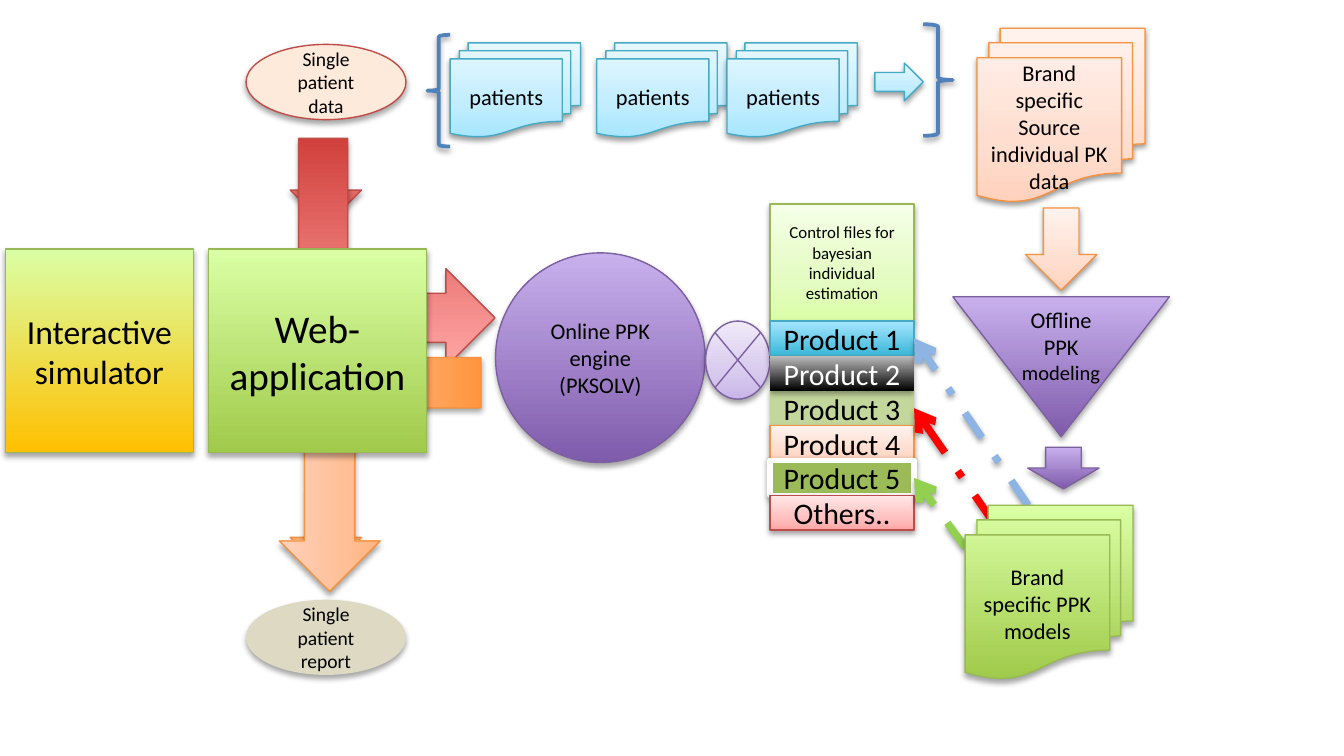
"""Build the slide of a web-based patient simulator fed by population models."""
from copy import deepcopy
from dataclasses import dataclass

from lxml.etree import SubElement
from pptx import Presentation
from pptx.dml.color import RGBColor
from pptx.enum.dml import MSO_LINE
from pptx.enum.shapes import MSO_CONNECTOR, MSO_SHAPE
from pptx.enum.text import MSO_ANCHOR, PP_ALIGN
from pptx.oxml.ns import qn
from pptx.util import Pt


@dataclass(frozen=True)
class Style:
    stops: tuple = ()
    line: str = ""
    width: float = 0.75
    text: str = "000000"
    shadow: tuple = (35, 1.8)


SOFT = (38, 1.6)


class Theme:
    font = "Calibri"
    note, oval, modeling, label, product, simulator, application = 9, 10.5, 11, 12, 16, 18, 21
    red = Style(("D1403C", "FFA6A5"), "BF4C48")
    orange = Style(("FF953E", "FFD2BD"), "F69240")
    purple = Style(("7F5BAB", "C8B0ED"), "7D60A0")
    green = Style(("A0CA4A", "DAFFA5"), "98B955")
    blue = Style(("39B7D8", "A7E6FF"), "46AAC5")
    gold = Style(("FFC000", "DAFFA5"), "98B955")
    black = Style(("000000", "BDBDBD"), text="FFFFFF")
    pale_red = Style(("FFA6A5", "FFC0BF", "FFE7E7"), "BF4C48", shadow=SOFT)
    pale_orange = Style(("FFD2BD", "FFDED0", "FFF2ED"), "F69240", shadow=SOFT)
    pale_purple = Style(("C9B5E8", "D8CBEE", "F0EAF9"), "7D60A0", shadow=SOFT)
    pale_green = Style(("DAFDA7", "E4FCC2", "F5FFE7"), "98B955", shadow=SOFT)
    pale_blue = Style(("A7E6FF", "C1EDFF", "E7F8FF"), "46AAC5", shadow=SOFT)
    data = Style(("FDEADA",), "BF4C48")
    report = Style(("DDD9C3",))
    olive = Style(("C3D69B",))
    framed = Style(("9BBB59",), "FFFFFF", 3, shadow=SOFT)
    brace = Style((), "4F81BD", 2, shadow=SOFT)
    link_colors = ("8EB4E3", "FF0000", "92D050")
    link_width = 4


def add_shadow(shape, opacity, distance):
    properties = shape.element.spPr
    effects = properties.find(qn("a:effectLst"))
    if effects is None:
        effects = SubElement(properties, qn("a:effectLst"))
    shadow = SubElement(effects, qn("a:outerShdw"), blurRad=str(Pt(3.1)),
                        dist=str(Pt(distance)), dir="5400000", rotWithShape="0")
    color = SubElement(shadow, qn("a:srgbClr"), val="000000")
    SubElement(color, qn("a:alpha"), val=str(opacity * 1000))


def add_box(kind, bounds, style, lines=(), size=Theme.label):
    shape = slide.shapes.add_shape(kind, *map(Pt, bounds))
    fill = shape.fill
    if len(style.stops) > 1:
        fill.gradient()
        fill.gradient_angle = 90
        if len(style.stops) == 3:
            first = shape.element.spPr.find(".//" + qn("a:gs"))
            first.addnext(deepcopy(first))
        positions = (0, 1) if len(style.stops) == 2 else (0, 0.35, 1)
        for stop, position, color in zip(fill.gradient_stops, positions, style.stops):
            stop.position = position
            stop.color.rgb = RGBColor.from_string(color)
    elif style.stops:
        fill.solid()
        fill.fore_color.rgb = RGBColor.from_string(style.stops[0])
    else:
        fill.background()
    if style.line:
        shape.line.color.rgb = RGBColor.from_string(style.line)
        shape.line.width = Pt(style.width)
    else:
        shape.line.fill.background()
    shape.shadow.inherit = False
    add_shadow(shape, *style.shadow)
    if lines:
        frame = shape.text_frame
        frame.text = "\n".join(lines)
        frame.word_wrap = True
        frame.vertical_anchor = MSO_ANCHOR.MIDDLE
        for para in frame.paragraphs:
            para.alignment = PP_ALIGN.CENTER
            for span in para.runs:
                span.font.name = Theme.font
                span.font.size = Pt(size)
                span.font.color.rgb = RGBColor.from_string(style.text)
    return shape


deck = Presentation()
deck.slide_width, deck.slide_height = Pt(720), Pt(405)
slide = deck.slides.add_slide(deck.slide_layouts[6])

add_box(MSO_SHAPE.DOWN_ARROW, (155.5, 77, 38.2, 44), Theme.red)
add_box(MSO_SHAPE.OVAL, (131.8, 321.3, 85.7, 40.3), Theme.report,
        ["Single patient report"], Theme.oval)
add_box(MSO_SHAPE.DOWN_ARROW, (155.5, 263, 38.2, 44), Theme.orange)
add_box(MSO_SHAPE.OVAL, (131.8, 23.8, 85.7, 40.3), Theme.data,
        ["Single patient data"], Theme.oval)
add_box(MSO_SHAPE.OVAL, (265.5, 135.5, 112.3, 112.3), Theme.purple,
        ["Online PPK engine", "(PKSOLV)"])

request = add_box(MSO_SHAPE.BENT_ARROW, (160, 74.2, 105.2, 122.4), Theme.red)
response = add_box(MSO_SHAPE.BENT_ARROW, (141, 200.2, 125.3, 108), Theme.orange)
response.rotation = 90
for arrow in (request, response):
    arrow.element.spPr.xfrm.set("flipV", "1")

add_box(MSO_SHAPE.FLOWCHART_MULTIDOCUMENT, (523.4, 15.1, 90, 93), Theme.pale_orange,
        ["Brand specific Source individual PK data"])
add_box(MSO_SHAPE.DOWN_ARROW, (549.4, 111.5, 38.2, 44), Theme.pale_orange)

column_left, column_width, row_top, row_pitch = 412.5, 77.2, 172, 18.7
add_box(MSO_SHAPE.RECTANGLE, (column_left, 109.4, column_width, 62.6), Theme.pale_green,
        ["Control files for bayesian individual estimation"], Theme.note)
add_box(MSO_SHAPE.FLOWCHART_SUMMING_JUNCTION, (378, 172, 34.5, 41.8), Theme.pale_purple)
rows = {}
for index, name, style in (
    (0, "Product 1", Theme.blue),
    (2, "Product 3", Theme.olive),
    (3, "Product 4", Theme.pale_orange),
    (4, "Product 5", Theme.framed),
    (5, "Others..", Theme.pale_red),
    (1, "Product 2", Theme.black),
):
    bounds = (column_left, row_top + row_pitch * index, column_width, 18.6)
    rows[name] = add_box(MSO_SHAPE.RECTANGLE, bounds, style, [name], Theme.product)

starts = ((550.8, 270.7), (531.4, 278.6), (517, 293))
targets = ("Product 1", "Product 3", "Product 5")
for (x, y), target, color in zip(starts, targets, Theme.link_colors):
    link = slide.shapes.add_connector(MSO_CONNECTOR.STRAIGHT, Pt(x), Pt(y), Pt(x), Pt(y))
    link.end_connect(rows[target], 3)
    link.line.color.rgb = RGBColor.from_string(color)
    link.line.width = Pt(Theme.link_width)
    link.line.dash_style = MSO_LINE.DASH_DOT
    SubElement(link.element.spPr.find(qn("a:ln")), qn("a:tailEnd"), type="arrow")
    add_shadow(link, *SOFT)

modeling = add_box(MSO_SHAPE.FLOWCHART_MERGE, (510.5, 159, 116, 75), Theme.purple,
                   ["Offline PPK modeling"])
modeling.text_frame.margin_top = Pt(18)
para = modeling.text_frame.paragraphs[0]
para.runs[0].text = "Offline PPK "
span = para.add_run()
span.text = "modeling"
span.font.name = Theme.font
span.font.size = Pt(Theme.modeling)
span.font.color.rgb = RGBColor.from_string(Theme.purple.text)

add_box(MSO_SHAPE.FLOWCHART_MULTIDOCUMENT, (517, 270.7, 90, 93), Theme.green,
        ["Brand specific PPK models"])
add_box(MSO_SHAPE.DOWN_ARROW, (550.6, 239.6, 38.2, 22.3), Theme.purple)

add_box(MSO_SHAPE.LEFT_BRACE, (229, 18.7, 12.2, 59.8), Theme.brace)
add_box(MSO_SHAPE.RIGHT_BRACE, (494.6, 13, 15.8, 59.8), Theme.brace)
add_box(MSO_SHAPE.RIGHT_ARROW, (468.7, 33.8, 25.9, 20.2), Theme.pale_blue)
for left in (241.2, 319.7, 389.5):
    add_box(MSO_SHAPE.FLOWCHART_MULTIDOCUMENT, (left, 23, 69.8, 50.4), Theme.pale_blue,
            ["patients"])

add_box(MSO_SHAPE.RECTANGLE, (111.6, 133.4, 117, 109.2), Theme.green,
        ["Web-application"], Theme.application)
add_box(MSO_SHAPE.RECTANGLE, (2.9, 133.4, 100.8, 109), Theme.gold,
        ["Interactive simulator"], Theme.simulator)

deck.save("out.pptx")
